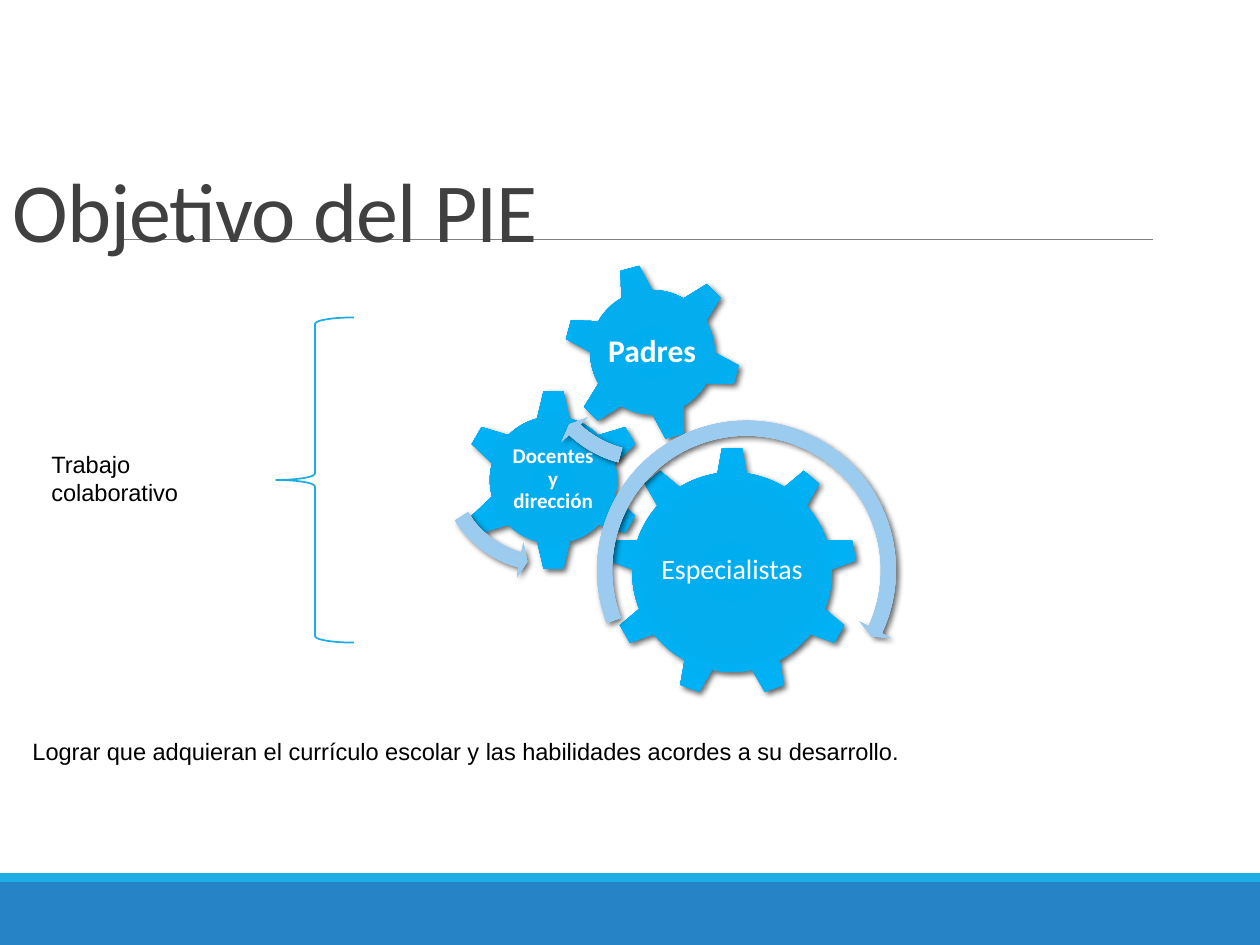
from lxml.etree import SubElement as Sub
from pptx import Presentation
from pptx.dml.color import RGBColor as RGB
from pptx.enum.shapes import MSO_CONNECTOR as Conn, MSO_SHAPE as Kind
from pptx.enum.text import MSO_ANCHOR as Anchor, MSO_AUTO_SIZE as Auto, PP_ALIGN as Align
from pptx.oxml.ns import qn
from pptx.util import Pt

BLUE = RGB(0x26, 0x83, 0xC6)
CYAN = RGB(0x1C, 0xAD, 0xE4)
GRAY = RGB(0x80, 0x80, 0x80)
DARK = RGB(0x40, 0x40, 0x40)
BLACK = RGB(0, 0, 0)
WHITE = RGB(0xFF, 0xFF, 0xFF)
STOPS = (0, 34, 70, 100)
VIVID = (RGB(0x00, 0xAD, 0xEF), RGB(0x03, 0xAD, 0xEE),
         RGB(0x00, 0xB1, 0xF5), RGB(0x12, 0xB1, 0xEE))
PALE = (RGB(0x97, 0xC6, 0xE8), RGB(0x9A, 0xC8, 0xE9),
        RGB(0x9B, 0xCB, 0xEE), RGB(0xA9, 0xD3, 0xF3))

WIDE, HIGH = 720, 540
BANDS = [(504, 36, BLUE), (499, 5, CYAN)]
GEARS = [
    ("Especialistas", Kind.GEAR_9, (347, 255.6, 142.6), 0,
     (375.8, 289.4, 85, 73.4), dict(size=16, pad=1.6)),
    ("Docentes y dirección", Kind.GEAR_6, (264.4, 222.4, 103.7), 0,
     (290.2, 248.4, 51.8, 51.1), dict(size=12, bold=True, pad=1.2)),
    ("Padres", Kind.GEAR_6, (322, 150.5, 101.5), 345,
     (344.2, 172.8, 56.9, 56.9), dict(size=18, bold=True, pad=1.8)),
]
ARROWS = [
    (Kind.CIRCULAR_ARROW, (335.5, 234.7, 182.2), (0.047, 2.99, 24.9, 159.19, 0.055)),
    (Kind.LEFT_CIRCULAR_ARROW, (245.5, 199.4, 132.5), (0.065, 4.3, 104.89, 148.38, 0.075)),
    (Kind.CIRCULAR_ARROW, (298.8, 128.9, 143.3), (0.06, 3.94, 133.14, 105.08, 0.07)),
]
NOTES = [
    ("Lograr que adquieran el currículo escolar y las habilidades acordes a su desarrollo.",
     (11.5, 417.6, 703.4, 23.8)),
    ("Trabajo colaborativo", (22.3, 253.4, 129.6, 40.3)),
]

deck = Presentation()
deck.slide_width, deck.slide_height = Pt(WIDE), Pt(HIGH)
slide = deck.slides.add_slide(deck.slide_layouts[6])
shapes = slide.shapes


def write(text, box, size=13.5, font="Calibri", color=WHITE, bold=False,
          align=Align.CENTER, anchor=Anchor.MIDDLE, pad=None, lead=0.9,
          track=None, grow=False):
    frame = shapes.add_textbox(*map(Pt, box)).text_frame
    frame.word_wrap = True
    frame.auto_size = Auto.SHAPE_TO_FIT_TEXT if grow else Auto.NONE
    frame.vertical_anchor = anchor
    if pad is not None:
        frame.margin_left = frame.margin_right = Pt(pad)
        frame.margin_top = frame.margin_bottom = Pt(pad)
    para = frame.paragraphs[0]
    para.alignment, para.line_spacing = align, lead
    run = para.add_run()
    run.text = text
    run.font.size, run.font.name, run.font.bold = Pt(size), font, bold
    run.font.color.rgb = color
    if track is not None:
        run.font._element.set("spc", str(track))


def draw(kind, box):
    shape = shapes.add_shape(kind, *map(Pt, box))
    shape.shadow.inherit = False
    shape.fill.background()
    shape.line.fill.background()
    return shape


def tint(parent, color):
    return Sub(parent, qn("a:srgbClr"), val=str(color))


def gloss(kind, spot, colors):
    left, top, side = spot
    shape = draw(kind, (left, top, side, side))
    shape.fill.gradient()
    props = shape._element.spPr
    grad = props.find(qn("a:gradFill"))
    for part in list(grad):
        grad.remove(part)
    stops = Sub(grad, qn("a:gsLst"))
    for stop, color in zip(STOPS, colors):
        tint(Sub(stops, qn("a:gs"), pos=str(stop * 1000)), color)
    route = Sub(grad, qn("a:path"), path="circle")
    Sub(route, qn("a:fillToRect"), dict.fromkeys("ltrb", "100000"))
    shade = Sub(props.find(qn("a:effectLst")), qn("a:outerShdw"),
                blurRad=str(Pt(3.5)), dist=str(Pt(2)), dir="2700000", rotWithShape="0")
    Sub(tint(shade, BLACK), qn("a:alpha"), val="60000")
    return shape


for top, high, color in BANDS:
    band = draw(Kind.RECTANGLE, (0, top, WIDE, high))
    band.fill.solid()
    band.fill.fore_color.rgb = color

rule = shapes.add_connector(Conn.STRAIGHT, Pt(70.6), Pt(136.8), Pt(658.8), Pt(136.8))
rule.line.color.rgb, rule.line.width = GRAY, Pt(0.5)
Sub(rule._element.spPr, qn("a:effectLst"))

write("Objetivo del PIE", (0, 84.2, 714.2, 67.7), size=48, color=DARK,
      align=Align.LEFT, anchor=Anchor.BOTTOM, lead=0.85, track=-50)

for label, kind, spot, turn, box, style in GEARS:
    gloss(kind, spot, VIVID).rotation = turn
    write(label, box, **style)

for kind, spot, values in ARROWS:
    arrow = gloss(kind, spot, PALE)
    for i, value in enumerate(values):
        arrow.adjustments[i] = value * 0.6 if i in (1, 2, 3) else value

brace = draw(Kind.LEFT_BRACE, (157.7, 181.4, 44.6, 185.8))
brace.line.color.rgb, brace.line.width = CYAN, Pt(1)

for text, box in NOTES:
    write(text, box, font="Arial", color=BLACK, align=Align.JUSTIFY,
          anchor=Anchor.TOP, lead=1.0, grow=True)

deck.save("out.pptx")
